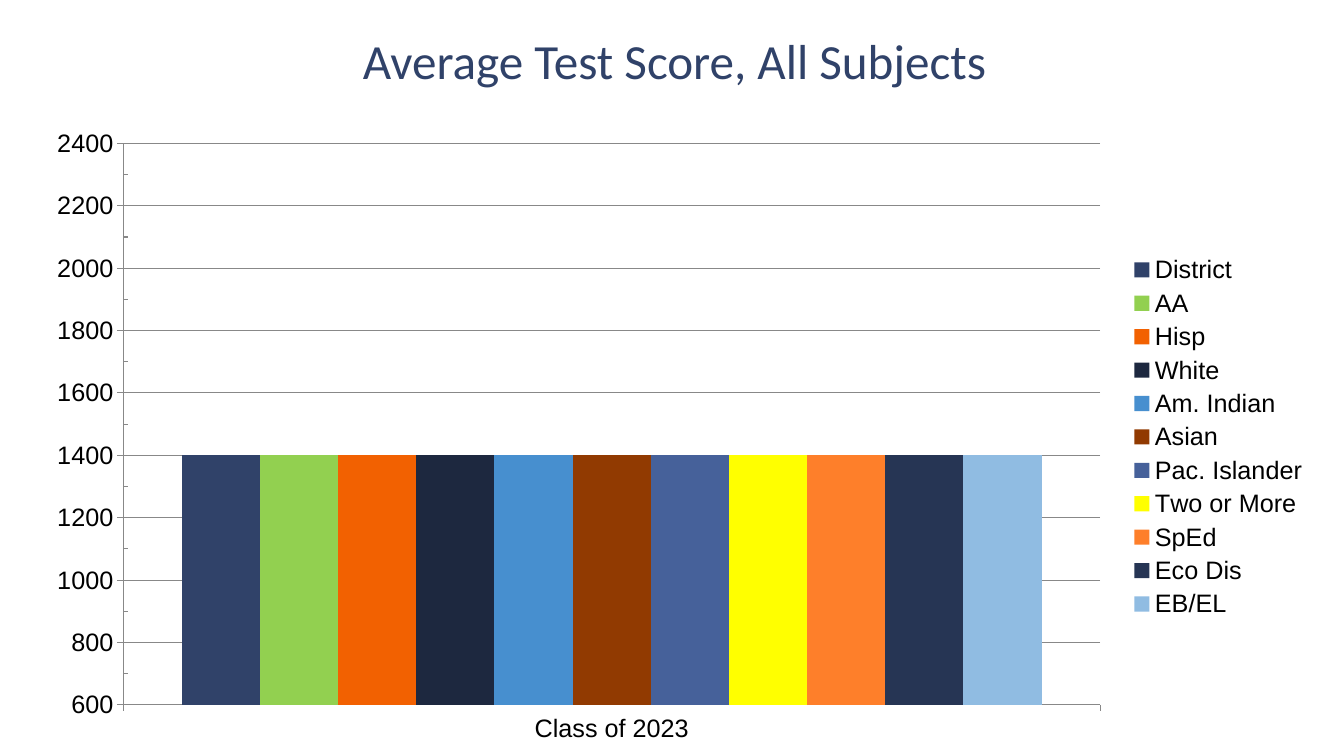
from lxml import etree
from pptx import Presentation
from pptx.chart.data import CategoryChartData
from pptx.dml.color import RGBColor
from pptx.enum import chart as kinds, text
from pptx.oxml.ns import qn
from pptx.util import Inches, Pt


def paint(target, color):
    if hasattr(target, "solid"):
        target.solid()
        target = target.fore_color
    target.rgb = RGBColor.from_string(color)


def style_font(font, name, size, color):
    for key, value in {"name": name, "size": Pt(size), "bold": False}.items():
        setattr(font, key, value)
    paint(font.color, color)


groups = {
    "District": "304269",
    "AA": "92D050",
    "Hisp": "F26101",
    "White": "1D283F",
    "Am. Indian": "478FCF",
    "Asian": "913A01",
    "Pac. Islander": "46619A",
    "Two or More": "FFFF00",
    "SpEd": "FE7F2A",
    "Eco Dis": "263554",
    "EB/EL": "90BCE2",
}

deck = Presentation()
deck.slide_width, deck.slide_height = Inches(13.33), Inches(7.5)
page = deck.slides.add_slide(deck.slide_layouts[5])

title = page.shapes.title
title_place = {"left": 1.69, "top": 0.17, "width": 10, "height": 0.85}
for key, value in title_place.items():
    setattr(title, key, Inches(value))
frame = title.text_frame
frame.text = "Average Test Score, All Subjects"
frame.auto_size = text.MSO_AUTO_SIZE.NONE
frame.vertical_anchor = text.MSO_ANCHOR.MIDDLE
frame.paragraphs[0].alignment = text.PP_ALIGN.CENTER
style_font(frame.paragraphs[0].runs[0].font, "Calibri", 35.1, "304269")

scores = CategoryChartData()
scores.categories = ["Class of 2023"]
for group in groups:
    scores.add_series(group, [1400])
chart = page.shapes.add_chart(
    kinds.XL_CHART_TYPE.COLUMN_CLUSTERED,
    Inches(0.33), Inches(1.17), Inches(12.75), Inches(6.33), scores,
).chart
chart.has_title = False
style_font(chart.font, "Arial", 18, "000000")

plot = chart.plots[0]
plot.gap_width, plot.overlap, plot.vary_by_categories = 150, 0, False
for series, color in zip(plot.series, groups.values()):
    paint(series.format.fill, color)
    series.invert_if_negative = False

chart.has_legend = True
chart.legend.position = kinds.XL_LEGEND_POSITION.RIGHT
chart.legend.include_in_layout = False
style_font(chart.legend.font, "Arial", 18, "000000")

score_axis = chart.value_axis
score_scale = {
    "minimum_scale": 600,
    "maximum_scale": 2400,
    "major_unit": 200,
    "minor_unit": 100,
    "has_major_gridlines": True,
    "minor_tick_mark": kinds.XL_TICK_MARK.INSIDE,
}
for key, value in score_scale.items():
    setattr(score_axis, key, value)
for axis in (chart.category_axis, score_axis):
    axis.major_tick_mark = kinds.XL_TICK_MARK.OUTSIDE
    style_font(axis.tick_labels.font, "Arial", 18, "000000")
for ruled in (chart.category_axis, score_axis, score_axis.major_gridlines):
    ruled.format.line.width = Pt(0.75)
    paint(ruled.format.line.fill, "888888")

plot_area = chart.element.find(".//" + qn("c:plotArea"))
for layout in plot_area.findall(qn("c:layout")):
    plot_area.remove(layout)
layout = etree.Element(qn("c:layout"))
plot_area.insert(0, layout)
manual = etree.SubElement(layout, qn("c:manualLayout"))
plot_place = {
    "layoutTarget": "inner",
    "xMode": "edge",
    "yMode": "edge",
    "x": 0.07,
    "y": 0.04,
    "w": 0.76,
    "h": 0.88,
}
for key, value in plot_place.items():
    etree.SubElement(manual, qn("c:" + key)).set("val", str(value))

deck.save("out.pptx")
